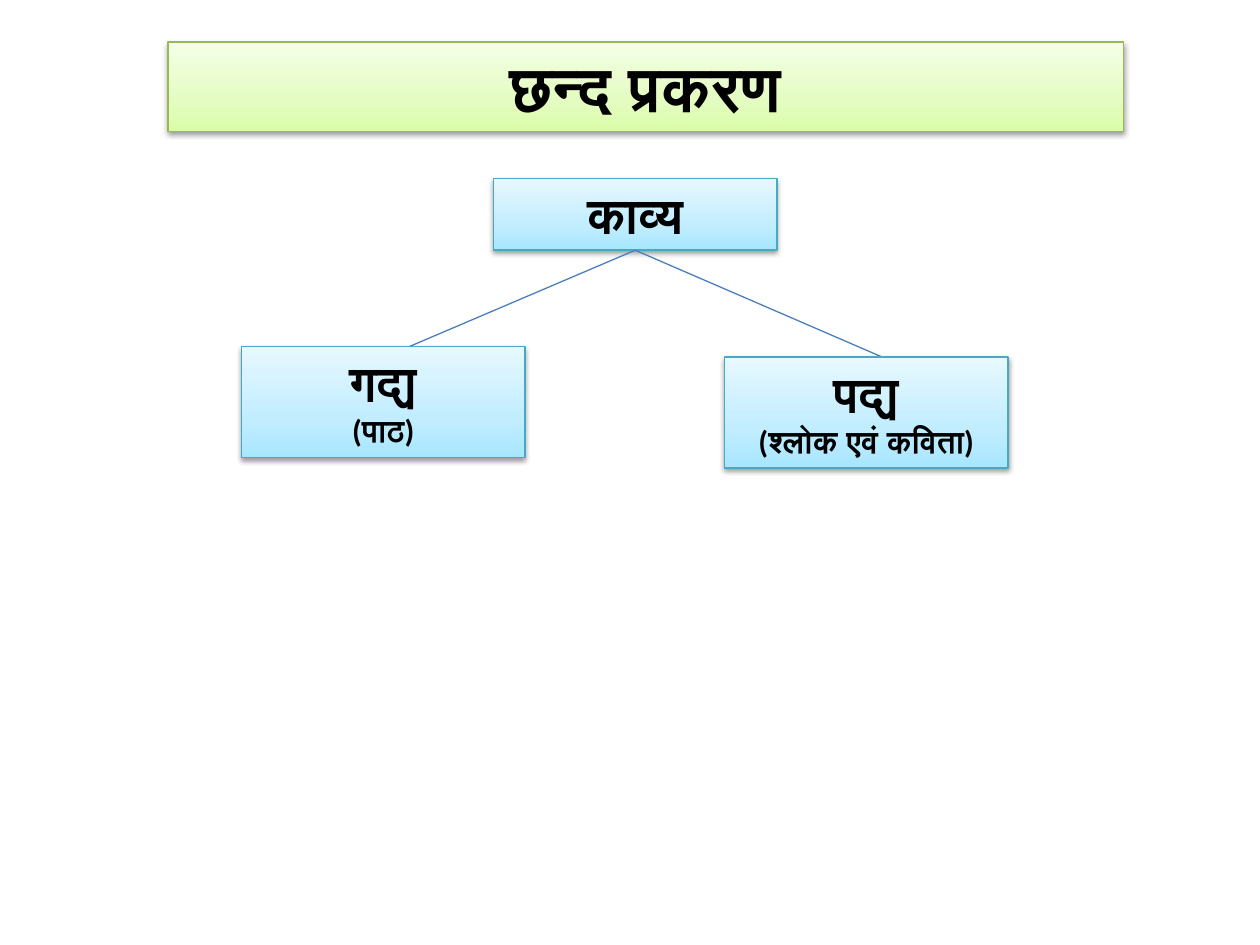
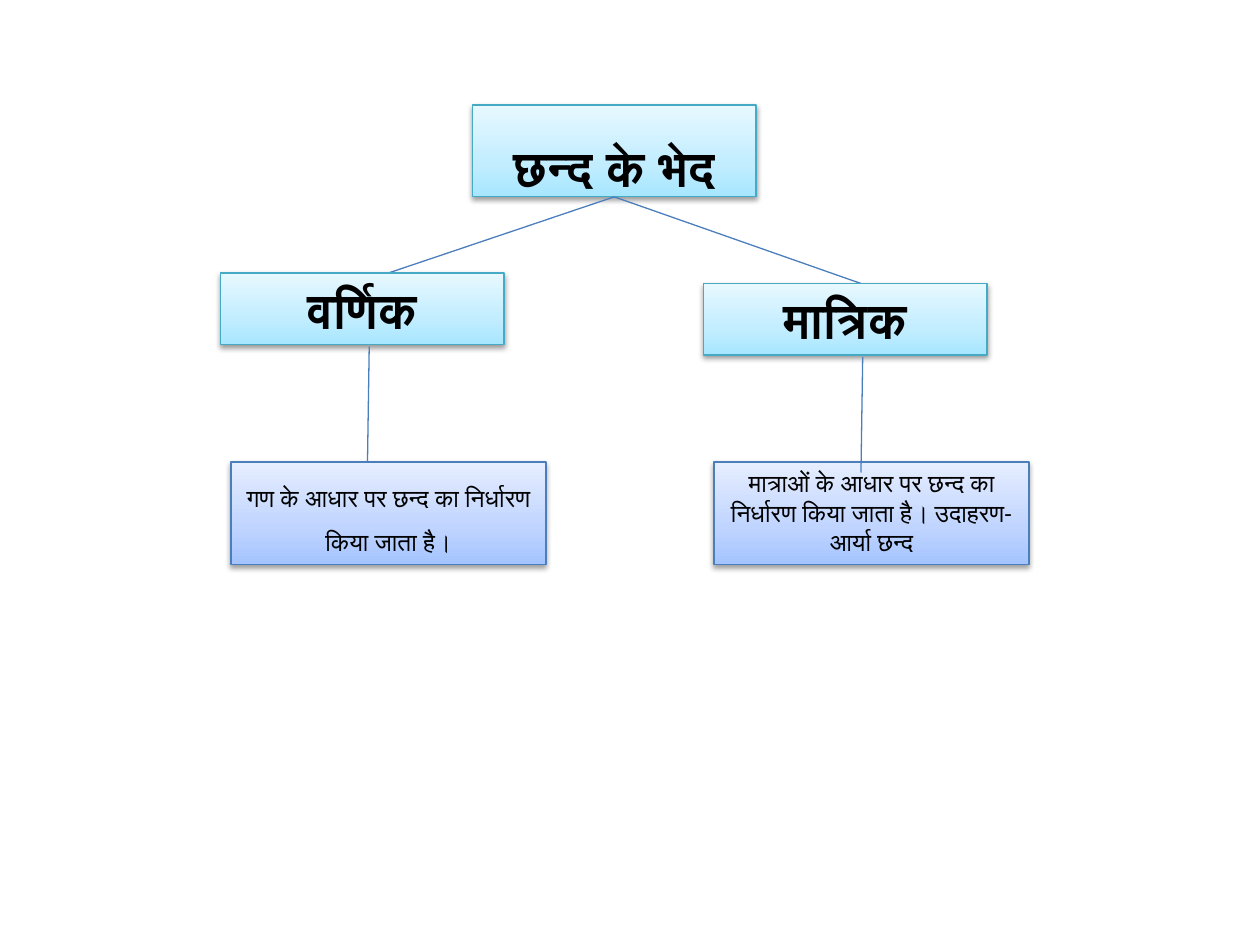
from copy import deepcopy

from lxml import etree
from pptx import Presentation
from pptx.dml.color import RGBColor
from pptx.enum.shapes import MSO_CONNECTOR, MSO_SHAPE
from pptx.enum.text import MSO_ANCHOR, MSO_AUTO_SIZE, PP_ALIGN
from pptx.oxml.ns import qn
from pptx.util import Pt

RECT, STRAIGHT = MSO_SHAPE.RECTANGLE, MSO_CONNECTOR.STRAIGHT
TOP, CENTER, GROW = MSO_ANCHOR.TOP, PP_ALIGN.CENTER, MSO_AUTO_SIZE.SHAPE_TO_FIT_TEXT
rgb = RGBColor.from_string

# Each style: outline, then gradient colours at 0, 35 and 100 %, bottom to top
GREEN = ("98B955", "DAFDA7", "E4FCC2", "F5FFE7")
AQUA = ("46AAC5", "A7E6FF", "C1EDFF", "E7F8FF")
BLUE = ("4B7EBC", "A4C4FF", "BFD4FF", "E6EEFF")
LINE = "4B7EBC"
NODE_W = 162


def add_box(s, left, top, width, height, style, lines, bold=True, spacing=None):
    """Add a gradient box with a soft shadow; lines holds (text, size) pairs."""
    outline, *colours = style
    sp = s.shapes.add_shape(RECT, Pt(left), Pt(top), Pt(width), Pt(height))
    sp.fill.gradient()
    sp.fill.gradient_angle = 90
    first = sp._element.spPr.find(".//" + qn("a:gs"))
    first.addnext(deepcopy(first))
    for stop, position, colour in zip(sp.fill.gradient_stops, (0, 0.35, 1), colours):
        stop.position = position
        stop.color.rgb = rgb(colour)
    sp.line.color.rgb = rgb(outline)
    sp.line.width = Pt(0.75)

    sp.shadow.inherit = False
    effects = sp._element.spPr.find(qn("a:effectLst"))
    shadow = etree.SubElement(effects, qn("a:outerShdw"), blurRad=str(Pt(3.1)),
                              dist=str(Pt(1.6)), dir="5400000", rotWithShape="0")
    black = etree.SubElement(shadow, qn("a:srgbClr"), val="000000")
    etree.SubElement(black, qn("a:alpha"), val="38000")

    tf = sp.text_frame
    for name, value in {"word_wrap": True, "auto_size": GROW, "vertical_anchor": TOP}.items():
        setattr(tf, name, value)
    for i, (text, size) in enumerate(lines):
        p = tf.add_paragraph() if i else tf.paragraphs[0]
        p.alignment = CENTER
        p.line_spacing = spacing
        r = p.add_run()
        r.text = text
        for name, value in {"name": "Calibri", "size": Pt(size), "bold": bold}.items():
            setattr(r.font, name, value)
        r.font.color.rgb = rgb("000000")
    return sp


def add_line(s, x1, y1, x2, y2):
    cxn = s.shapes.add_connector(STRAIGHT, Pt(x1), Pt(y1), Pt(x2), Pt(y2))
    cxn.line.color.rgb = rgb(LINE)
    cxn.line.width = Pt(0.75)
    etree.SubElement(cxn._element.spPr, qn("a:effectLst"))
    return cxn


prs = Presentation()
prs.slide_width, prs.slide_height = Pt(720), Pt(540)
slides = [prs.slides.add_slide(prs.slide_layouts[6]) for _ in range(2)]

add_box(slides[0], 96, 24, 546, 51, GREEN, [("छन्द प्रकरण", 36)])

# Both trees share one layout, placed from the root's left and top
trees = [
    (282, 102, 41, None, "काव्य", 63.5,
     [[("गद्य", 28), ("(पाठ)", 18)], [("पद्य", 28), ("(श्लोक एवं कविता)", 18)]]),
    (270, 60, 52.5, 1.45, "छन्द के भेद", 41,
     [[("वर्णिक", 28)], [("मात्रिक", 28)]]),
]
for s, (left, top, root_h, spacing, title, leaf_h, leaves) in zip(slides, trees):
    root = add_box(s, left, top, NODE_W, root_h, AQUA, [(title, 28)], spacing=spacing)
    for end_dx, end_dy in ((-48, 96), (222, 102)):
        branch = add_line(s, left + NODE_W / 2, top + root_h, left + end_dx, top + end_dy)
        branch.begin_connect(root, 2)
    for (dx, dy), lines in zip(((-144, 96), (132, 102)), leaves):
        add_box(s, left + dx, top + dy, NODE_W, leaf_h, AQUA, lines)

descriptions = [
    (132, 1.5, "गण के आधार पर छन्द का निर्धारण किया जाता है।"),
    (408, None, "मात्राओं के आधार पर छन्द का निर्धारण किया जाता है। उदाहरण- आर्या छन्द"),
]
for left, spacing, text in descriptions:
    add_box(slides[1], left, 264, 180, 58.5, BLUE, [(text, 14)], bold=False, spacing=spacing)
for x, y in ((211, 198), (493, 204)):
    add_line(slides[1], x, y, x - 1, y + 66)

prs.save("out.pptx")
